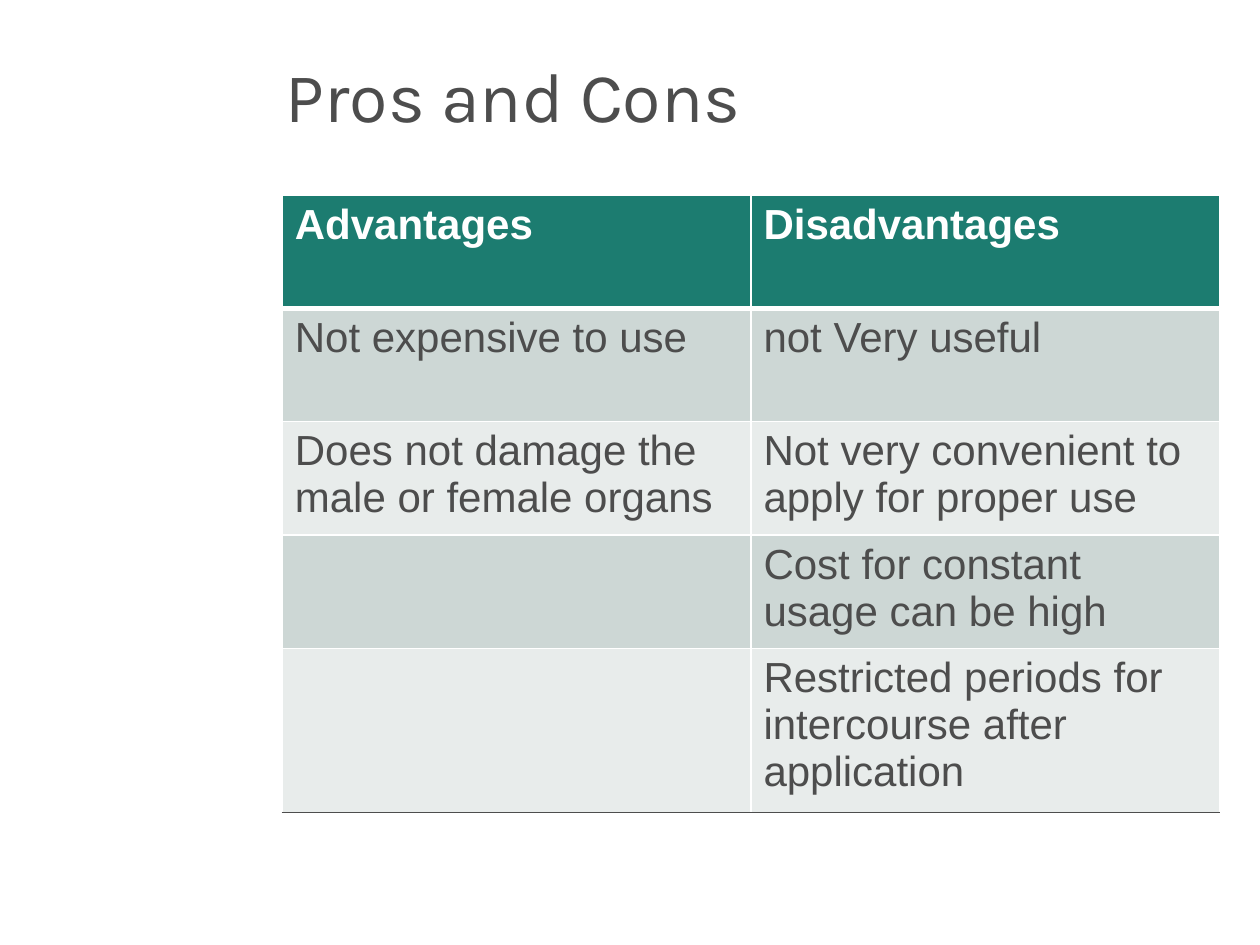
"""Build the Pros and Cons slide with its two-column table."""
from pptx import Presentation
from pptx.dml.color import RGBColor as RGB
from pptx.enum.text import MSO_ANCHOR as Anchor, PP_ALIGN as Align
from pptx.oxml import parse_xml
from pptx.util import Inches, Pt

WHITE = RGB(0xFF, 0xFF, 0xFF)
GRAY = RGB(0x4D, 0x4D, 0x4D)
TEAL = RGB(0x1C, 0x7C, 0x70)
DARK = RGB(0xCD, 0xD7, 0xD5)
LIGHT = RGB(0xE8, 0xEC, 0xEB)
NS = "http://schemas.openxmlformats.org/drawingml/2006/main"

ROWS = [
    ("Advantages", "Disadvantages"),
    ("Not expensive to use", "not Very useful"),
    ("Does not damage the male or female organs",
     "Not very convenient to apply for proper use"),
    ("", "Cost for constant usage can be high"),
    ("", "Restricted periods for intercourse after application"),
]


def style(font, name, size, color, bold=False):
    font.name = name
    font.size = Pt(size)
    font.color.rgb = color
    font.bold = bold


def border(cell, side, color, width):
    line = parse_xml(
        f'<a:{side} xmlns:a="{NS}" w="{Pt(width)}"><a:solidFill>'
        f'<a:srgbClr val="{color}"/></a:solidFill></a:{side}>')
    cell._tc.get_or_add_tcPr().append(line)


deck = Presentation()
deck.slide_width, deck.slide_height = Inches(10), Inches(7.5)
slide = deck.slides.add_slide(deck.slide_layouts[6])

title = slide.shapes.add_textbox(
    Inches(2.17), Inches(0.36), Inches(7.58), Inches(0.78))
frame = title.text_frame
frame.word_wrap = True
frame.vertical_anchor = Anchor.MIDDLE
frame.text = "Pros and Cons"
style(frame.paragraphs[0].runs[0].font, "Karla", 40, GRAY)

table = slide.shapes.add_table(
    len(ROWS), 2, Inches(2.24), Inches(1.55), Inches(7.44), Inches(4.49)).table

for r, row in enumerate(ROWS):
    head, last = r == 0, r == len(ROWS) - 1
    fill = TEAL if head else DARK if r % 2 else LIGHT
    for c, text in enumerate(row):
        cell = table.cell(r, c)
        for side in ("lnL", "lnR", "lnT"):
            border(cell, side, WHITE, 3 if r == 1 and side == "lnT" else 1)
        border(cell, "lnB", GRAY if last else WHITE, 3 if head else 1)
        cell.fill.solid()
        cell.fill.fore_color.rgb = fill
        cell.text_frame.text = text
        para = cell.text_frame.paragraphs[0]
        para.alignment = Align.LEFT
        for run in para.runs:
            style(run.font, "Arial", 24, WHITE if head else GRAY, head)

deck.save("out.pptx")
